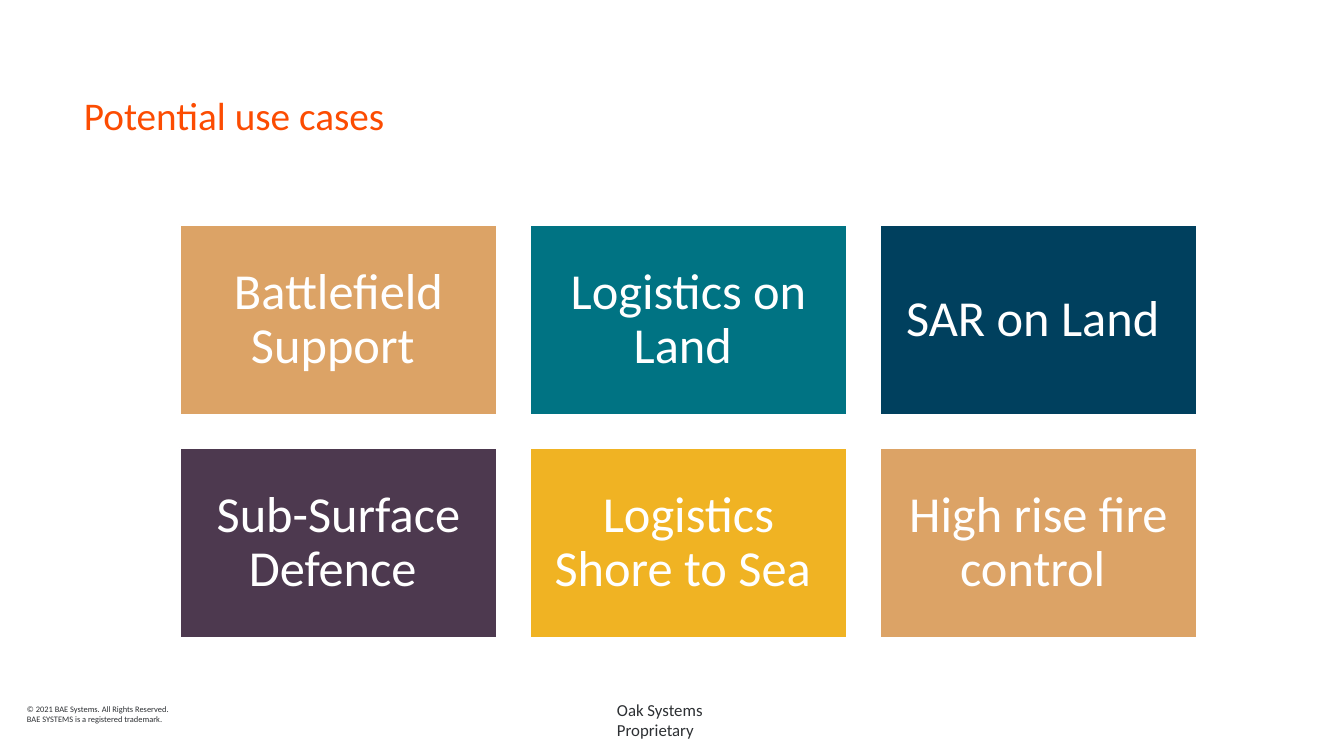
from pptx import Presentation
from pptx import util as u
from pptx.dml.color import RGBColor
from pptx.enum import shapes, text

WHITE = RGBColor(0xFF, 0xFF, 0xFF)
ORANGE = RGBColor(0xFC, 0x4C, 0x02)
INK = RGBColor(0x2D, 0x30, 0x33)
SAND = RGBColor(0xDC, 0xA3, 0x66)
TEAL = RGBColor(0x00, 0x73, 0x83)
NAVY = RGBColor(0x00, 0x40, 0x5E)
PLUM = RGBColor(0x4D, 0x39, 0x4F)
YELLOW = RGBColor(0xF0, 0xB3, 0x23)

TOP, MIDDLE, BOTTOM = (text.MSO_ANCHOR.TOP, text.MSO_ANCHOR.MIDDLE,
                       text.MSO_ANCHOR.BOTTOM)

LABELS = [
    ("Potential use cases", (84, 48, 1233, 91), 28, ORANGE, BOTTOM, 0.9),
    ("© 2021 BAE Systems. All Rights Reserved.\n"
     "BAE SYSTEMS is a registered trademark.", (27, 698, 180, 32), 6, INK, MIDDLE, 1.0),
    ("Oak Systems Proprietary", (617, 700, 110, 40), 12, INK, TOP, 1.0),
]
USE_CASES = [
    ("Battlefield Support ", SAND),
    ("Logistics on Land ", TEAL),
    ("SAR on Land ", NAVY),
    ("Sub-Surface Defence ", PLUM),
    ("Logistics Shore to Sea ", YELLOW),
    ("High rise fire control ", SAND),
]
COLUMNS = 3
LEFT, TOP_EDGE = 180, 225
TILE_W, TILE_H = 317, 190
GAP = 33
PAD = 15


def px(n):
    return u.Emu(round(n * 914400 / 100.8))


def write(sp, words, size, color, anchor, spacing, pad=0, align=text.PP_ALIGN.LEFT):
    tf = sp.text_frame
    tf.word_wrap = True
    tf.vertical_anchor = anchor
    tf.margin_left = tf.margin_right = tf.margin_top = tf.margin_bottom = px(pad)
    tf.text = words
    for p in tf.paragraphs:
        p.alignment = align
        p.line_spacing = spacing
        for r in p.runs:
            r.font.name = "Calibri"
            r.font.size = u.Pt(size)
            r.font.color.rgb = color


prs = Presentation()
prs.slide_width, prs.slide_height = px(1344), px(756)
s = prs.slides.add_slide(prs.slide_layouts[6])

for words, box, size, color, anchor, spacing in LABELS:
    sp = s.shapes.add_textbox(*map(px, box))
    write(sp, words, size, color, anchor, spacing)

for i, (words, fill) in enumerate(USE_CASES):
    row, col = divmod(i, COLUMNS)
    x = LEFT + col * (TILE_W + GAP)
    y = TOP_EDGE + row * (TILE_H + GAP)
    sp = s.shapes.add_shape(shapes.MSO_SHAPE.RECTANGLE,
                            px(x), px(y), px(TILE_W), px(TILE_H))
    sp.shadow.inherit = False
    sp.fill.solid()
    sp.fill.fore_color.rgb = fill
    sp.line.color.rgb = WHITE
    sp.line.width = u.Pt(1)
    write(sp, words, 36, WHITE, MIDDLE, 0.9, PAD, text.PP_ALIGN.CENTER)

prs.save("out.pptx")
